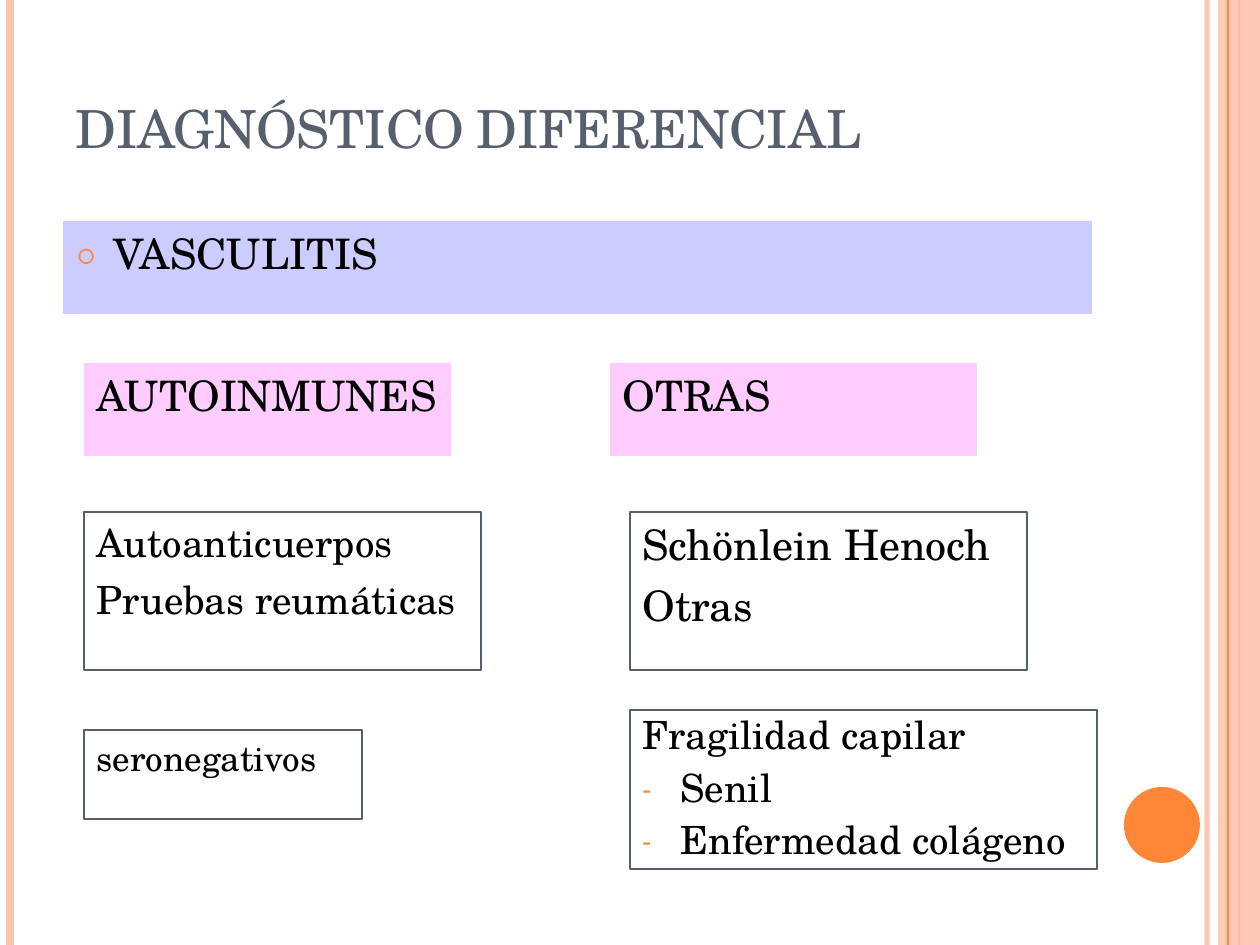
from dataclasses import dataclass
from typing import Optional

from lxml.etree import SubElement
from pptx import Presentation
from pptx.dml.color import RGBColor
from pptx.enum.shapes import MSO_CONNECTOR as Connector, MSO_SHAPE as Preset
from pptx.enum.text import MSO_ANCHOR as Anchor, MSO_AUTO_SIZE as AutoSize, PP_ALIGN as Align
from pptx.oxml.ns import qn
from pptx.util import Pt

EMU_PER_PX = 914400 / 126
PAGE_WIDTH, PAGE_HEIGHT = 1260, 945
FONT = "TeX Gyre Schola"
INDENT = 38
COLORS = {
    "peach": "FEC3AE",
    "orange": "FE8637",
    "slate": "575F6D",
    "black": "000000",
    "lilac": "CCCCFF",
    "pink": "FFCCFF",
}


@dataclass
class Stripe:
    x: int
    color: str
    weight: float
    opacity: int = 100


@dataclass
class Card:
    left: int
    top: int
    width: int
    height: int
    lines: list[str]
    size: float = 24
    fill: Optional[str] = None
    spacing: Optional[float] = None
    dashed_from: int = 99  # index of the first line with a dash


def px(value: int) -> int:
    return round(value * EMU_PER_PX)


def rgb(name: str) -> RGBColor:
    return RGBColor.from_string(COLORS[name])


def place(shape, left: int, top: int, width: int, height: int) -> None:
    shape.left, shape.top, shape.width, shape.height = map(px, (left, top, width, height))


def set_opacity(shape, percent: int) -> None:
    if percent < 100:
        color = next(shape._element.spPr.iter(qn("a:srgbClr")))
        SubElement(color, qn("a:alpha"), val=str(percent * 1000))


def add_bullet(para, char: str) -> None:
    props = para._p.get_or_add_pPr()
    color = SubElement(props, qn("a:buClr"))
    SubElement(color, qn("a:srgbClr"), val=COLORS["orange"])
    SubElement(props, qn("a:buSzPct"), val="70000")
    SubElement(props, qn("a:buFont"), typeface=FONT)
    SubElement(props, qn("a:buChar"), char=char)


def add_text(para, text: str, *, size: float, color: str = "black", before: int = 6,
             spacing: Optional[float] = None, hanging: bool = True,
             bullet: Optional[str] = None, small_caps: bool = False) -> None:
    para.alignment = Align.LEFT
    para.space_before = Pt(before)
    if spacing:
        para.line_spacing = spacing
    if hanging:
        props = para._p.get_or_add_pPr()
        props.set("marL", str(px(INDENT)))
        props.set("indent", str(-px(INDENT)))
    if bullet:
        add_bullet(para, bullet)
    span = para.add_run()
    span.text = text
    span.font.name, span.font.size = FONT, Pt(size)
    span.font.color.rgb = rgb(color)
    if small_caps:
        span._r.get_or_add_rPr().set("cap", "small")


def prepare_frame(shape, anchor: Anchor = Anchor.TOP):
    frame = shape.text_frame
    frame.word_wrap = True
    frame.auto_size = AutoSize.NONE
    frame.vertical_anchor = anchor
    return frame


def add_stripe(page, stripe: Stripe) -> None:
    line = page.shapes.add_connector(
        Connector.STRAIGHT, px(stripe.x), 0, px(stripe.x), px(PAGE_HEIGHT))
    line.line.color.rgb = rgb(stripe.color)
    line.line.width = Pt(stripe.weight)
    set_opacity(line, stripe.opacity)
    SubElement(line._element.spPr, qn("a:effectLst"))


def add_block(shapes, preset: Preset, left: int, top: int, width: int, height: int,
              fill: Optional[str] = None, opacity: int = 100):
    box = shapes.add_shape(preset, *map(px, (left, top, width, height)))
    box.shadow.inherit = False
    if fill:
        box.fill.solid()
        box.fill.fore_color.rgb = rgb(fill)
        box.line.fill.background()
        set_opacity(box, opacity)
    else:
        box.fill.background()
        box.line.color.rgb = rgb("slate")
        box.line.width = Pt(0.75)
    return box


def add_card(shapes, card: Card) -> None:
    box = add_block(shapes, Preset.RECTANGLE, card.left, card.top,
                    card.width, card.height, card.fill)
    frame = prepare_frame(box)
    for index, line in enumerate(card.lines):
        para = frame.add_paragraph() if index else frame.paragraphs[0]
        add_text(para, line, size=card.size, spacing=card.spacing,
                 bullet="-" if index >= card.dashed_from else None)


AUTOIMMUNE = [
    Card(84, 363, 367, 93, ["AUTOINMUNES"], fill="pink"),
    Card(84, 512, 397, 158, ["Autoanticuerpos", "Pruebas reumáticas"], size=22.2),
    Card(84, 730, 278, 89, ["seronegativos"], size=20),
]
OTHERS = [
    Card(610, 363, 367, 93, ["OTRAS"], fill="pink"),
    Card(630, 512, 397, 158, ["Schönlein Henoch", "Otras"]),
    Card(630, 710, 467, 159, ["Fragilidad capilar", "Senil", "Enfermedad colágeno"],
         size=22.2, spacing=0.9, dashed_from=1),
]


def main() -> None:
    deck = Presentation()
    deck.slide_width, deck.slide_height = px(PAGE_WIDTH), px(PAGE_HEIGHT)
    page = deck.slides.add_slide(deck.slide_layouts[1])

    # Side decoration
    for stripe in (Stripe(1207, "peach", 3, 93), Stripe(10, "peach", 4.5),
                   Stripe(1239, "orange", 1.5)):
        add_stripe(page, stripe)
    add_block(page.shapes, Preset.RECTANGLE, 1218, 0, 42, PAGE_HEIGHT, "peach", 87)
    add_stripe(page, Stripe(1228, "orange", 0.75))
    add_block(page.shapes, Preset.OVAL, 1124, 787, 76, 76, "orange")

    # Title
    title = page.shapes.title
    place(title, 63, 45, 1029, 120)
    add_text(prepare_frame(title, Anchor.BOTTOM).paragraphs[0], "DIAGNÓSTICO DIFERENCIAL",
             size=30, color="slate", before=0, hanging=False, small_caps=True)

    # Main heading
    body = page.placeholders[1]
    place(body, 63, 221, 1029, 93)
    body.fill.solid()
    body.fill.fore_color.rgb = rgb("lilac")
    add_text(prepare_frame(body).paragraphs[0], "VASCULITIS", size=24, bullet="○")

    # Two columns of cards
    for column in (AUTOIMMUNE, OTHERS):
        group = page.shapes.add_group_shape()
        for card in column:
            add_card(group.shapes, card)

    deck.save("out.pptx")


if __name__ == "__main__":
    main()
